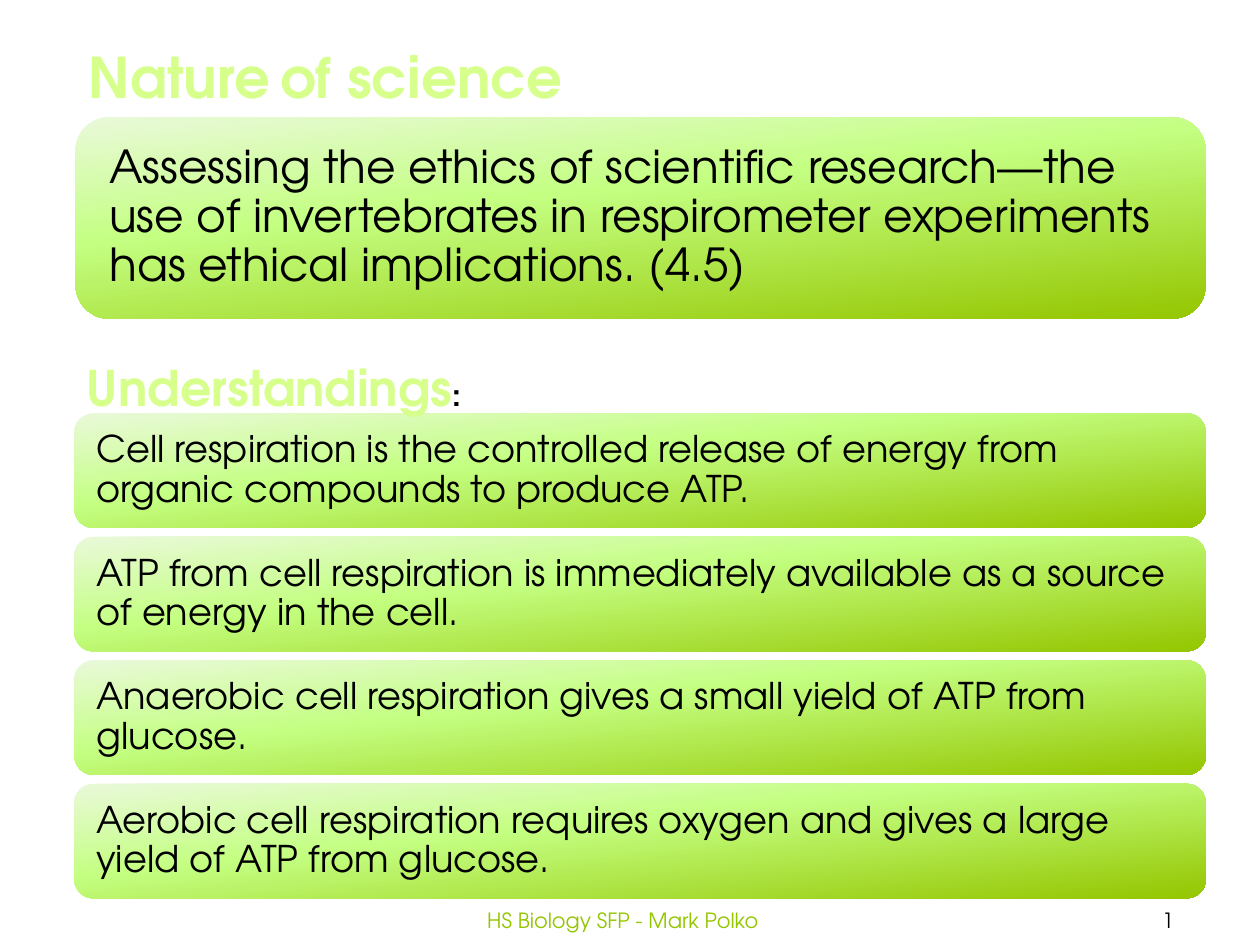
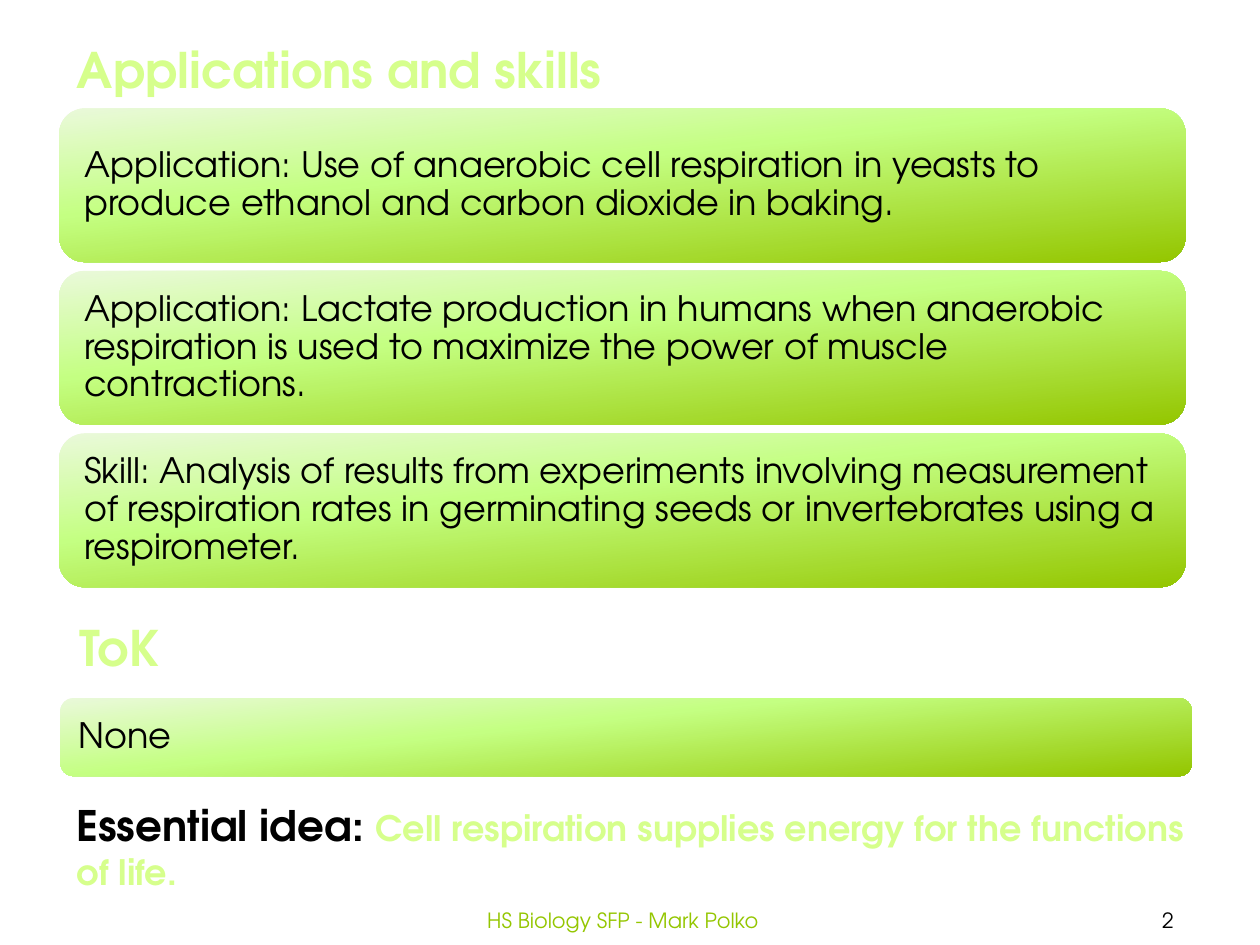
from dataclasses import dataclass

from lxml import etree
from pptx import Presentation
from pptx.dml.color import RGBColor
from pptx.enum import shapes, text
from pptx.oxml import parse_xml
from pptx.oxml.ns import nsdecls, qn
from pptx.util import Inches, Pt


@dataclass(frozen=True)
class Theme:
    font: str = "TeX Gyre Adventor"
    black: str = "000000"
    green: str = "94C600"
    lime: str = "D6FF8C"
    outline: str = "434128"
    card_stops: tuple = ((0, "EAF9DA"), (40, "C4FF82"), (100, "94C600"))
    card_angle: int = 84
    title_size: int = 32
    heading_size: int = 28
    idea_size: int = 24
    lead_size: int = 26
    small_size: int = 12


THEME = Theme()
FOOTER = "HS Biology SFP - Mark Polko"
LEFT, CENTER = text.PP_ALIGN.LEFT, text.PP_ALIGN.CENTER
TOP, MIDDLE = text.MSO_ANCHOR.TOP, text.MSO_ANCHOR.MIDDLE


def write(frame, runs, align=LEFT, spacing=1.0, **frame_format):
    """Format a text frame and fill it with (words, size, colour, bold, outlined) runs."""
    settings = {"word_wrap": True, "vertical_anchor": TOP,
                "auto_size": text.MSO_AUTO_SIZE.NONE, **frame_format}
    for name, value in settings.items():
        setattr(frame, name, value)
    paragraph = frame.paragraphs[0]
    paragraph.alignment = align
    paragraph.line_spacing = spacing
    for words, size, colour, bold, outlined in runs:
        run = paragraph.add_run()
        run.text = words
        for name, value in {"name": THEME.font, "size": Pt(size), "bold": bold}.items():
            setattr(run.font, name, value)
        run.font.color.rgb = RGBColor.from_string(colour)
        if outlined:
            run.font._element.insert(0, parse_xml(
                f'<a:ln {nsdecls("a")} w="12700"><a:solidFill>'
                f'<a:srgbClr val="{THEME.outline}"/></a:solidFill></a:ln>'))


def heading(words, size=THEME.heading_size):
    return (words, size, THEME.lime, True, True)


# Card groups: left, top, width, height, pitch, inset, text size, texts
# Headings: left, top, width, height, wrapped, alignment, runs (the first is the title)
slides = [
    {
        "cards": [
            (0.6, 0.93, 8.97, 1.6, 0, 0.19, THEME.lead_size, [
                "Assessing the ethics of scientific research—the use of invertebrates "
                "in respirometer experiments has ethical implications. (4.5)"]),
            (0.59, 3.28, 8.98, 0.91, 0.98, 0.13, 21, [
                "Cell respiration is the controlled release of energy from organic "
                "compounds to produce ATP.",
                "ATP from cell respiration is immediately available as a source of "
                "energy in the cell.",
                "Anaerobic cell respiration gives a small yield of ATP from glucose.",
                "Aerobic cell respiration requires oxygen and gives a large yield of "
                "ATP from glucose."]),
        ],
        "headings": [
            (0.58, 0.29, 4.01, 0.64, False, CENTER, [
                heading("Nature", THEME.title_size),
                (" ", 20, THEME.black, True, False),
                heading("of science", THEME.title_size)]),
            (0.59, 2.79, 3.2, 0.57, False, LEFT, [
                heading("Understandings"), (":", 18, THEME.black, True, False)]),
        ],
    },
    {
        "cards": [
            (0.47, 0.86, 8.94, 1.22, 1.29, 0.14, 20, [
                "Application: Use of anaerobic cell respiration in yeasts to produce "
                "ethanol and carbon dioxide in baking.",
                "Application: Lactate production in humans when anaerobic respiration "
                "is used to maximize the power of muscle contractions.",
                "Skill: Analysis of results from experiments involving measurement of "
                "respiration rates in germinating seeds or invertebrates using a "
                "respirometer."]),
            (0.48, 5.54, 8.98, 0.62, 0, 0.11, 20, ["None"]),
        ],
        "headings": [
            (0.51, 0.26, 4.8, 0.57, True, LEFT, [heading("Applications and skills")]),
            (0.53, 4.85, 4.8, 0.57, True, LEFT, [heading("ToK")]),
            (0.51, 6.3, 9.03, 0.84, True, LEFT, [
                ("Essential idea: ", THEME.idea_size, THEME.black, True, True),
                heading("Cell respiration supplies energy for the functions of life.", 20)]),
        ],
    },
]

presentation = Presentation()
presentation.slide_width, presentation.slide_height = Inches(10), Inches(7.5)
title_only = presentation.slide_layouts[5]

for number, content in enumerate(slides, start=2):
    slide = presentation.slides.add_slide(title_only)

    number_box = slide.shapes.add_textbox(Inches(8.54), Inches(7.1), Inches(1.46), Inches(0.4))
    write(number_box.text_frame, [(str(number), THEME.small_size, THEME.black, False, False)],
          CENTER, vertical_anchor=MIDDLE)
    number_run = number_box.text_frame.paragraphs[0].runs[0]._r
    field = etree.Element(qn("a:fld"), type="slidenum",
                          id="{B6F15528-21DE-4FAA-801E-634DDDAF4B2B}")
    number_run.getparent().replace(number_run, field)
    field.extend(list(number_run))

    footer_box = slide.shapes.add_textbox(Inches(3.03), Inches(7.1), Inches(3.83), Inches(0.4))
    write(footer_box.text_frame, [(FOOTER, THEME.small_size, THEME.green, False, False)],
          CENTER, vertical_anchor=MIDDLE)

    for left, top, width, height, pitch, inset, size, texts in content["cards"]:
        for row, words in enumerate(texts):
            card = slide.shapes.add_shape(
                shapes.MSO_SHAPE.ROUNDED_RECTANGLE, Inches(left),
                Inches(top + row * pitch), Inches(width), Inches(height))
            card.shadow.inherit = False
            card.line.fill.background()
            stops = "".join(f'<a:gs pos="{position * 1000}"><a:srgbClr val="{colour}"/></a:gs>'
                            for position, colour in THEME.card_stops)
            card.element.spPr.find(qn("a:prstGeom")).addnext(parse_xml(
                f'<a:gradFill {nsdecls("a")} rotWithShape="1"><a:gsLst>{stops}</a:gsLst>'
                f'<a:lin ang="{THEME.card_angle * 60000}" scaled="0"/></a:gradFill>'))
            margins = {f"margin_{side}": Inches(inset)
                       for side in ("left", "top", "right", "bottom")}
            write(card.text_frame, [(words, size, THEME.black, False, False)],
                  spacing=0.9, vertical_anchor=MIDDLE, **margins)

    for index, (left, top, width, height, wrapped, align, runs) in enumerate(content["headings"]):
        box = [Inches(length) for length in (left, top, width, height)]
        if index == 0:
            shape = slide.shapes.title
            shape.left, shape.top, shape.width, shape.height = box
        else:
            shape = slide.shapes.add_textbox(*box)
        write(shape.text_frame, runs, align, word_wrap=wrapped,
              auto_size=text.MSO_AUTO_SIZE.SHAPE_TO_FIT_TEXT)

presentation.save("out.pptx")
